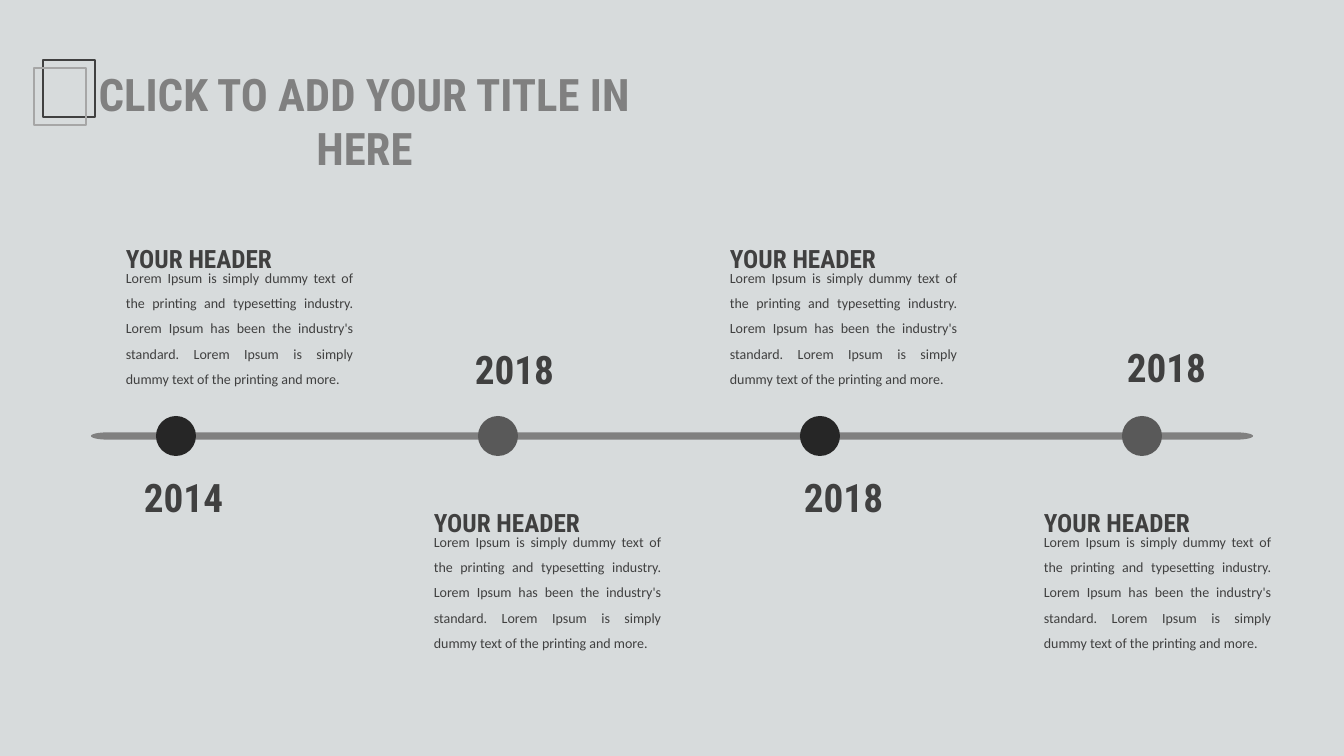
from math import cos, pi, sin

from pptx import Presentation
from pptx.dml.color import RGBColor
from pptx.enum.shapes import MSO_SHAPE as Shape
from pptx.enum.text import MSO_AUTO_SIZE as AutoSize, PP_ALIGN as Align
from pptx.util import Emu, Pt

# Content
TITLE = "CLICK TO ADD YOUR TITLE IN HERE"
HEADER = "YOUR HEADER"
BODY = ("Lorem Ipsum is simply dummy text of the printing and typesetting industry. "
        "Lorem Ipsum has been the industry's standard. "
        "Lorem Ipsum is simply dummy text of the printing and more.")
# Year, year left and top, story left and top
MILESTONES = [
    ("2014", 134, 468, 116, 256),
    ("2018", 465, 340, 424, 520),
    ("2018", 794, 468, 720, 256),
    ("2018", 1117, 338, 1034, 520),
]

# Style
HEAD_FONT, BODY_FONT = "Roboto Condensed", "Calibri"
BACKDROP = RGBColor(0xD7, 0xDB, 0xDC)
INK = RGBColor(0x40, 0x40, 0x40)
GRAY = RGBColor(0x80, 0x80, 0x80)
PALE = RGBColor(0xA6, 0xA6, 0xA6)
DOT_COLORS = [RGBColor(0x26, 0x26, 0x26), RGBColor(0x59, 0x59, 0x59)]

# Layout in px
WIDTH, HEIGHT = 1344, 756
PX = 12192000 / WIDTH
BAR_LEFT, BAR_RIGHT, BAR_MIDDLE = 91, 1253, 436
CAP_WIDTH, CAP_HEIGHT, CAP_STEPS = 16, 3.6, 16
DOT_SIZE, DOT_LEFT, DOT_PITCH = 40, 156, 322
HEADER_RISE = 33


def px(*lengths):
    return [Emu(round(length * PX)) for length in lengths]


def add_text(box, text, size, font, color, bold=True, align=Align.LEFT,
             spacing=None, wrap=True):
    frame = slide.shapes.add_textbox(*px(*box)).text_frame
    frame.word_wrap = wrap
    frame.auto_size = AutoSize.SHAPE_TO_FIT_TEXT
    paragraph = frame.paragraphs[0]
    paragraph.alignment = align
    if spacing:
        paragraph.line_spacing = spacing
    run = paragraph.add_run()
    run.text = text
    run.font.size, run.font.name, run.font.bold = Pt(size), font, bold
    run.font.color.rgb = color


def fill_plain(shape, color):
    shape.shadow.inherit = False
    shape.fill.solid()
    shape.fill.fore_color.rgb = color
    shape.line.fill.background()


prs = Presentation()
prs.slide_width, prs.slide_height = px(WIDTH, HEIGHT)
slide = prs.slides.add_slide(prs.slide_layouts[6])
slide.background.fill.solid()
slide.background.fill.fore_color.rgb = BACKDROP

# Overlapping square outlines
for left, top, color in [(43, 60, INK), (34, 68, PALE)]:
    square = slide.shapes.add_shape(Shape.RECTANGLE, *px(left, top, 52, 57))
    square.shadow.inherit = False
    square.fill.background()
    square.line.color.rgb = color
    square.line.width = Pt(1)

# Timeline bar with half-ellipse ends
outline = []
for center, start in [(BAR_RIGHT - CAP_WIDTH, -pi / 2), (BAR_LEFT + CAP_WIDTH, pi / 2)]:
    for step in range(CAP_STEPS + 1):
        angle = start + pi * step / CAP_STEPS
        outline.append(px(center + CAP_WIDTH * cos(angle),
                          BAR_MIDDLE + CAP_HEIGHT * sin(angle)))
builder = slide.shapes.build_freeform(*outline[0])
builder.add_line_segments(outline[1:], close=True)
fill_plain(builder.convert_to_shape(), GRAY)

# Milestones
for index, (year, year_left, year_top, left, top) in enumerate(MILESTONES):
    add_text((year_left, year_top, 100, 57), year, 28, HEAD_FONT, INK, wrap=False)
    add_text((left, top, 247, 136), BODY, 10, BODY_FONT, INK, bold=False,
             align=Align.JUSTIFY, spacing=1.5)
    add_text((left, top - HEADER_RISE, 240, 55), HEADER, 18, HEAD_FONT, INK, spacing=1.5)
    dot = slide.shapes.add_shape(Shape.OVAL, *px(
        DOT_LEFT + index * DOT_PITCH, BAR_MIDDLE - DOT_SIZE / 2, DOT_SIZE, DOT_SIZE))
    fill_plain(dot, DOT_COLORS[index % 2])

# Title
add_text((84, 62, 561, 118), TITLE, 32, HEAD_FONT, GRAY, align=Align.CENTER)

prs.save("out.pptx")
